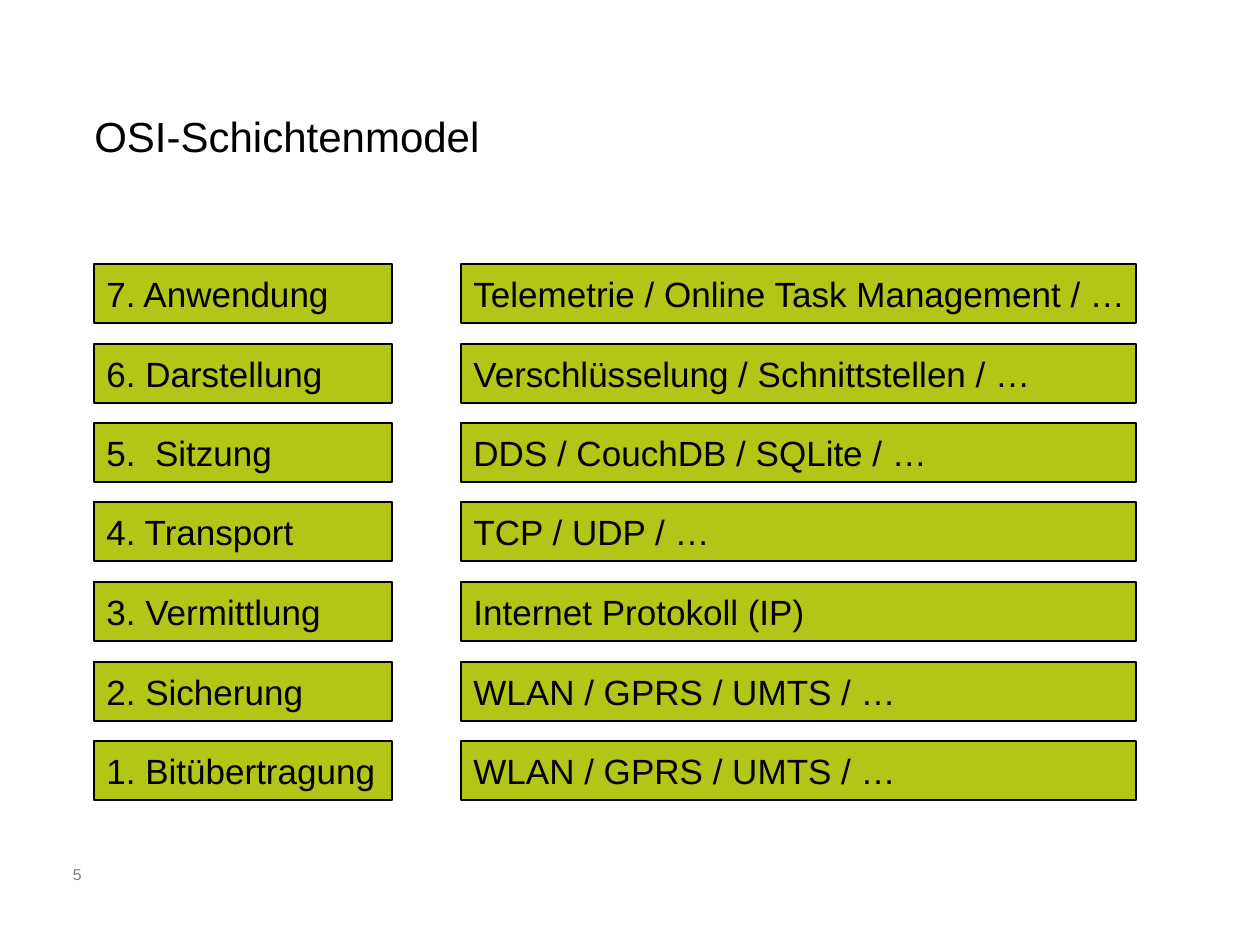
"""Build the slide that maps the OSI layers to the protocols in use."""
import pptx
import pptx.dml.color
import pptx.enum.shapes
import pptx.enum.text
import pptx.util

EMU_PER_PX = 914400 / 126
COLOURS = {"layer": "B3C618", "text": "000000", "number": "808080"}
FONT = "Arial"
LAYERS = [
    ("7. Anwendung", "Telemetrie / Online Task Management / …"),
    ("6. Darstellung", "Verschlüsselung / Schnittstellen / …"),
    ("5.  Sitzung", "DDS / CouchDB / SQLite / …"),
    ("4. Transport", "TCP / UDP / …"),
    ("3. Vermittlung", "Internet Protokoll (IP)"),
    ("2. Sicherung", "WLAN / GPRS / UMTS / …"),
    ("1. Bitübertragung", "WLAN / GPRS / UMTS / …"),
]
COLUMNS = [(94, 298), (461, 675)]
FIRST_TOP, LAST_TOP, LAYER_HEIGHT = 264, 741, 59


def px(*lengths):
    """Turn pixel lengths into EMU."""
    return [pptx.util.Emu(round(length * EMU_PER_PX)) for length in lengths]


def colour(name):
    """Return the named colour."""
    return pptx.dml.color.RGBColor.from_string(COLOURS[name])


def write_text(box, text, size, ink="text", align="LEFT", anchor="MIDDLE", wrap=True):
    """Write one formatted paragraph into a box."""
    frame = box.text_frame
    frame.word_wrap = wrap
    frame.vertical_anchor = getattr(pptx.enum.text.MSO_ANCHOR, anchor)
    para = frame.paragraphs[0]
    para.alignment = getattr(pptx.enum.text.PP_ALIGN, align)
    span = para.add_run()
    span.text = text
    span.font.name = FONT
    span.font.size = pptx.util.Pt(size)
    span.font.color.rgb = colour(ink)


def add_label(page, bounds, text, **text_format):
    """Add a text box with one line of text."""
    write_text(page.shapes.add_textbox(*px(*bounds)), text, **text_format)


def add_layer_box(page, bounds, text):
    """Add one filled and outlined layer box."""
    box = page.shapes.add_shape(pptx.enum.shapes.MSO_SHAPE.RECTANGLE, *px(*bounds))
    box.shadow.inherit = False
    box.fill.solid()
    box.fill.fore_color.rgb = colour("layer")
    box.line.color.rgb = colour("text")
    box.line.width = pptx.util.Pt(0.75)
    write_text(box, text, size=20, wrap=False)


def main():
    """Build and save the deck."""
    deck = pptx.Presentation()
    deck.slide_width, deck.slide_height = px(1260, 945)
    page = deck.slides.add_slide(deck.slide_layouts[6])
    add_label(page, (82, 77, 1095, 118), "OSI-Schichtenmodel", size=24)
    add_label(page, (35, 859, 59, 66), "5", size=9, ink="number", align="RIGHT", anchor="TOP")
    pitch = (LAST_TOP - FIRST_TOP) / (len(LAYERS) - 1)
    for row, texts in enumerate(LAYERS):
        top = round(FIRST_TOP + row * pitch)
        for (left, width), text in zip(COLUMNS, texts):
            add_layer_box(page, (left, top, width, LAYER_HEIGHT), text)
    deck.save("out.pptx")


if __name__ == "__main__":
    main()
